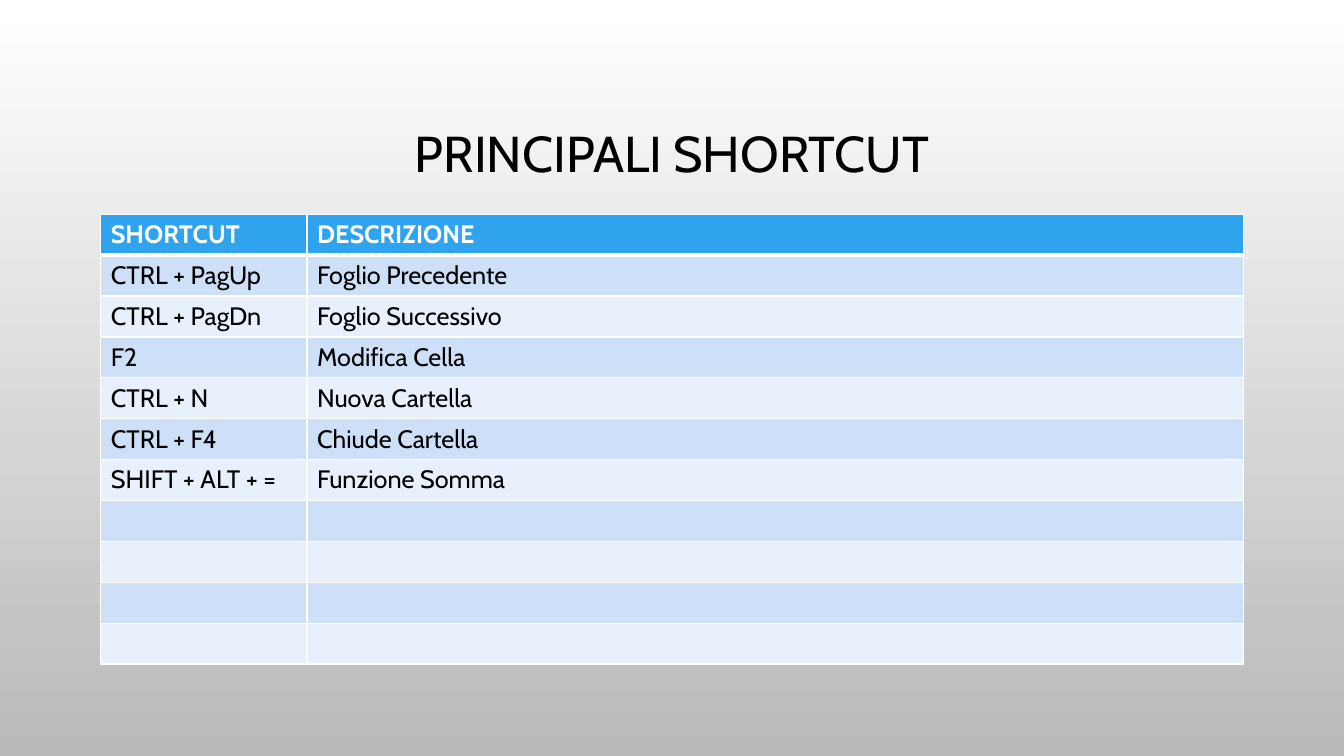
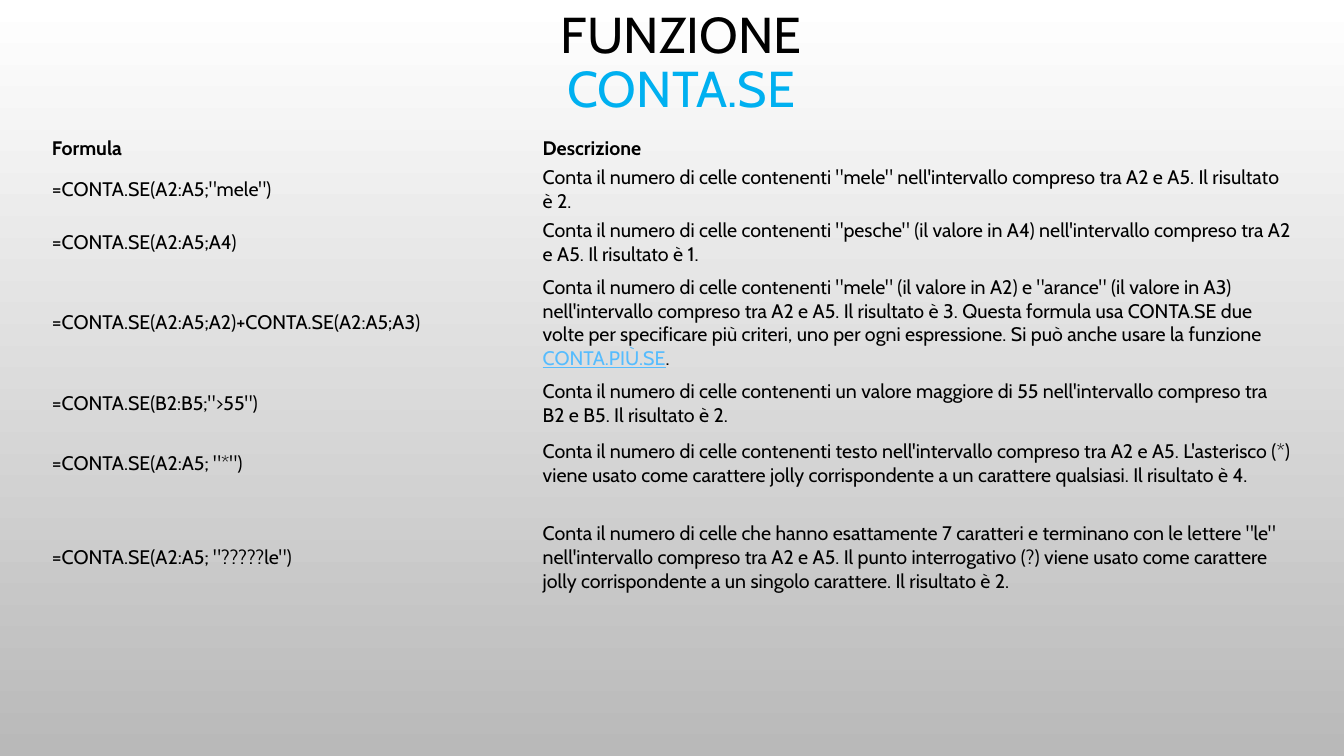
"""Builds two slides on spreadsheet shortcuts and the CONTA.SE function."""
from lxml import etree
from pptx import Presentation
from pptx.dml.color import RGBColor
from pptx.enum import text
from pptx.oxml.ns import qn
from pptx.util import Pt

FONT = "Cabin"
BLACK, WHITE, CYAN, LINK = "000000", "FFFFFF", "00B0F0", "56BCFE"
HEADER, BANDS = "2FA3EE", ("CDE0F8", "E8F0FC")
BACKDROP = (WHITE, "B9B9B9")
PLAIN_STYLE = "{2D5ABB26-0587-4C30-8999-92F81FD0307C}"
TOP, MIDDLE = text.MSO_ANCHOR.TOP, text.MSO_ANCHOR.MIDDLE

SHORTCUTS = [
    ("SHORTCUT", "DESCRIZIONE"),
    ("CTRL + PagUp", "Foglio Precedente"),
    ("CTRL + PagDn", "Foglio Successivo"),
    ("F2", "Modifica Cella"),
    ("CTRL + N", "Nuova Cartella"),
    ("CTRL + F4", "Chiude Cartella"),
    ("SHIFT + ALT + =", "Funzione Somma"),
] + [("", "")] * 4

FORMULAS = [
    ("Formula", "Descrizione"),
    ('=CONTA.SE(A2:A5;"mele")',
     'Conta il numero di celle contenenti "mele" nell\'intervallo compreso tra A2 e A5. '
     "Il risultato è 2."),
    ("=CONTA.SE(A2:A5;A4)",
     'Conta il numero di celle contenenti "pesche" (il valore in A4) nell\'intervallo '
     "compreso tra A2 e A5. Il risultato è 1."),
    ("=CONTA.SE(A2:A5;A2)+CONTA.SE(A2:A5;A3)",
     [('Conta il numero di celle contenenti "mele" (il valore in A2) e "arance" (il valore '
       "in A3) nell'intervallo compreso tra A2 e A5. Il risultato è 3. Questa formula usa "
       "CONTA.SE due volte per specificare più criteri, uno per ogni espressione. Si può "
       "anche usare la funzione ", {}),
      ("CONTA.PIÙ.SE", {"color": LINK, "underline": True}),
      (".", {})]),
    ('=CONTA.SE(B2:B5;">55")',
     "Conta il numero di celle contenenti un valore maggiore di 55 nell'intervallo "
     "compreso tra B2 e B5. Il risultato è 2."),
    ('=CONTA.SE(A2:A5; "*")',
     "Conta il numero di celle contenenti testo nell'intervallo compreso tra A2 e A5. "
     "L'asterisco (*) viene usato come carattere jolly corrispondente a un carattere "
     "qualsiasi. Il risultato è 4."),
    ('=CONTA.SE(A2:A5; "?????le")',
     "Conta il numero di celle che hanno esattamente 7 caratteri e terminano con le lettere "
     '"le" nell\'intervallo compreso tra A2 e A5. Il punto interrogativo (?) viene usato '
     "come carattere jolly corrispondente a un singolo carattere. Il risultato è 2."),
] + [("", "")] * 2
FORMULA_HEIGHTS = [21, 28, 39.6, 75.6, 39.6, 63.4, 39.6, 51.8, 56]
ASTERISK_ROW = 5


def rgb(value):
    return RGBColor.from_string(value)


def assign(target, values):
    for name, value in values.items():
        setattr(target, name, value)


def add_span(para, words, size, color=BLACK, **style):
    span = para.add_run()
    span.text = words
    assign(span.font, {"name": FONT, "size": Pt(size), **style})
    span.font.color.rgb = rgb(color)


def add_page(deck, lines, box):
    page = deck.slides.add_slide(deck.slide_layouts[5])
    title = page.shapes.title
    assign(title, dict(zip(("left", "top", "width", "height"), map(Pt, box))))
    assign(title.text_frame, {"word_wrap": True, "vertical_anchor": MIDDLE,
                              "auto_size": text.MSO_AUTO_SIZE.NONE})
    para = title.text_frame.paragraphs[0]
    assign(para, {"alignment": text.PP_ALIGN.CENTER, "line_spacing": 0.9})
    for index, (words, color) in enumerate(lines):
        if index:
            para.add_line_break()
        add_span(para, words, 36, color)
    return page


def add_grid(page, rows, left, top, widths, heights, size, anchor, header_color):
    box = page.shapes.add_table(len(rows), len(widths), Pt(left), Pt(top),
                                Pt(sum(widths)), Pt(sum(heights)))
    table = box.table
    table.horz_banding = False
    table._tbl.tblPr.find(qn("a:tableStyleId")).text = PLAIN_STYLE
    for column, width in zip(table.columns, widths):
        column.width = Pt(width)
    for index, (row, height, content) in enumerate(zip(table.rows, heights, rows)):
        row.height = Pt(height)
        for cell, spans in zip(row.cells, content):
            cell.vertical_anchor = anchor
            cell.fill.background()
            if isinstance(spans, str):
                spans = [(spans, {})] if spans else []
            for words, style in spans:
                base = {"color": BLACK if index else header_color, "bold": index == 0}
                add_span(cell.text_frame.paragraphs[0], words, size, **{**base, **style})
    return table


def add_borders(cell, bottom):
    props = cell._tc.get_or_add_tcPr()
    for index, (side, width) in enumerate((("L", 1), ("R", 1), ("T", 1), ("B", bottom))):
        line = etree.Element(qn(f"a:ln{side}"), w=str(Pt(width)))
        fill = etree.SubElement(line, qn("a:solidFill"))
        etree.SubElement(fill, qn("a:srgbClr"), val=WHITE)
        props.insert(index, line)


def build_shortcuts(deck):
    page = add_page(deck, [("PRINCIPALI SHORTCUT", BLACK)], (72, 48.6, 816, 126))
    table = add_grid(page, SHORTCUTS, 72, 153.1, (147.3, 668.7),
                     [29.2] * len(SHORTCUTS), 18, TOP, WHITE)
    for index, row in enumerate(table.rows):
        for cell in row.cells:
            cell.fill.solid()
            cell.fill.fore_color.rgb = rgb(BANDS[(index - 1) % 2] if index else HEADER)
            add_borders(cell, 1 if index else 3)


def build_formulas(deck):
    page = add_page(deck, [("FUNZIONE", BLACK), ("CONTA.SE", CYAN)], (78.6, 0, 816, 92))
    table = add_grid(page, FORMULAS, 34.3, 95.8, (350.6, 540.3),
                     FORMULA_HEIGHTS, 14, MIDDLE, BLACK)
    for index, row in enumerate(table.rows):
        bottom = 18.2 if index == ASTERISK_ROW else 1.2
        for cell in row.cells:
            assign(cell, {"margin_left": Pt(2.8), "margin_right": Pt(2.5),
                          "margin_top": Pt(1.2), "margin_bottom": Pt(bottom)})


def main():
    deck = Presentation()
    assign(deck, {"slide_width": Pt(960), "slide_height": Pt(540)})
    fill = deck.slide_master.background.fill
    fill.gradient()
    fill.gradient_angle = 270
    for stop, color in zip(fill.gradient_stops, BACKDROP):
        stop.color.rgb = rgb(color)
    build_shortcuts(deck)
    build_formulas(deck)
    deck.save("out.pptx")


if __name__ == "__main__":
    main()
